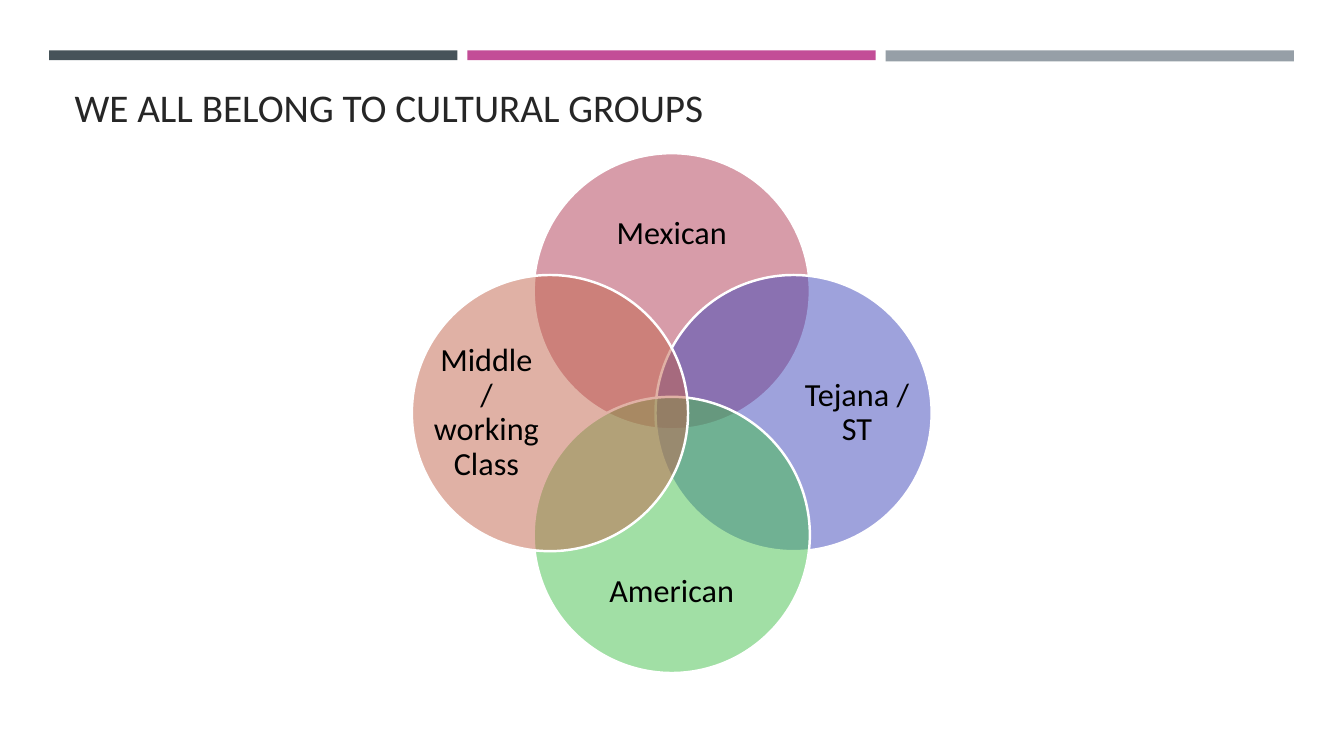
from dataclasses import dataclass

from lxml import etree
from pptx import Presentation
from pptx.dml.color import RGBColor
from pptx.enum.shapes import MSO_SHAPE
from pptx.enum.text import MSO_ANCHOR, PP_ALIGN
from pptx.oxml.ns import qn
from pptx.shapes.autoshape import Shape
from pptx.slide import Slide
from pptx.util import Cm, Pt

RECTANGLE = MSO_SHAPE.RECTANGLE
OVAL = MSO_SHAPE.OVAL
TOP = MSO_ANCHOR.TOP
MIDDLE = MSO_ANCHOR.MIDDLE
LEFT = PP_ALIGN.LEFT
CENTER = PP_ALIGN.CENTER

SLATE = RGBColor(0x46, 0x53, 0x59)
PINK = RGBColor(0xC3, 0x4D, 0x97)
GRAY = RGBColor(0x96, 0x9F, 0xA7)
CHARCOAL = RGBColor(0x26, 0x26, 0x26)
BLACK = RGBColor(0x00, 0x00, 0x00)
WHITE = RGBColor(0xFF, 0xFF, 0xFF)
ROSE = RGBColor(0xB1, 0x3B, 0x54)
BLUE = RGBColor(0x3E, 0x47, 0xBA)
GREEN = RGBColor(0x44, 0xC0, 0x4C)
RUST = RGBColor(0xC3, 0x65, 0x4D)

FONT = "Calibri"
CENTER_X, CENTER_Y = 16.93, 10.41
DIAMETER = 6.96
CIRCLE_OFFSET = 3.07
LABEL_LONG = 5.33


@dataclass(frozen=True)
class Bar:
    color: RGBColor
    height: float


@dataclass(frozen=True)
class Group:
    label: str
    color: RGBColor
    across: int
    down: int


BARS = [Bar(SLATE, 0.25), Bar(PINK, 0.25), Bar(GRAY, 0.28)]
GROUPS = [
    Group("Mexican", ROSE, 0, -1),
    Group("Tejana / ST", BLUE, 1, 0),
    Group("American", GREEN, 0, 1),
    Group("Middle / working Class", RUST, -1, 0),
]


def add_filled(page: Slide, kind: MSO_SHAPE, left: float, top: float,
               width: float, height: float, color: RGBColor) -> Shape:
    shape = page.shapes.add_shape(kind, Cm(left), Cm(top), Cm(width), Cm(height))
    shape.shadow.inherit = False
    shape.fill.solid()
    shape.fill.fore_color.rgb = color
    shape.line.fill.background()
    return shape


def add_text(page: Slide, text: str, left: float, top: float, width: float,
             height: float, size: float, color: RGBColor, align: PP_ALIGN,
             anchor: MSO_ANCHOR, inset_x: float = 0, inset_y: float = 0,
             spacing: float = 1.0) -> None:
    box = page.shapes.add_textbox(Cm(left), Cm(top), Cm(width), Cm(height))
    frame = box.text_frame
    frame.word_wrap = True
    frame.vertical_anchor = anchor
    frame.margin_left = frame.margin_right = Cm(inset_x)
    frame.margin_top = frame.margin_bottom = Cm(inset_y)
    para = frame.paragraphs[0]
    para.alignment = align
    para.line_spacing = spacing
    span = para.add_run()
    span.text = text
    span.font.name = FONT
    span.font.size = Pt(size)
    span.font.color.rgb = color


def set_opacity(shape: Shape, percent: int) -> None:
    color = shape.fill._xPr.find(qn("a:solidFill"))[0]
    etree.SubElement(color, qn("a:alpha")).set("val", str(percent * 1000))


def add_group(page: Slide, group: Group) -> None:
    circle = add_filled(
        page, OVAL,
        CENTER_X + group.across * CIRCLE_OFFSET - DIAMETER / 2,
        CENTER_Y + group.down * CIRCLE_OFFSET - DIAMETER / 2,
        DIAMETER, DIAMETER, group.color)
    set_opacity(circle, 50)
    circle.line.color.rgb = WHITE
    circle.line.width = Pt(1.75)

    width, height = (2.67, LABEL_LONG) if group.across else (LABEL_LONG, 2.21)
    add_text(
        page, group.label,
        CENTER_X + group.across * 4.67 - width / 2,
        CENTER_Y + group.down * 4.51 - height / 2,
        width, height, 23, BLACK, CENTER, MIDDLE, spacing=0.9)


def main() -> None:
    deck = Presentation()
    deck.slide_width = Cm(33.87)
    deck.slide_height = Cm(19.05)
    page = deck.slides.add_slide(deck.slide_layouts[6])

    for index, bar in enumerate(BARS):
        add_filled(page, RECTANGLE, 1.24 + index * 10.54, 1.27, 10.29,
                   bar.height, bar.color)
    add_text(page, "WE ALL BELONG TO CULTURAL GROUPS", 1.63, 1.96, 30.63, 3.3,
             28, CHARCOAL, LEFT, TOP, inset_x=0.25, inset_y=0.13)
    for group in GROUPS:
        add_group(page, group)

    deck.save("out.pptx")


if __name__ == "__main__":
    main()
